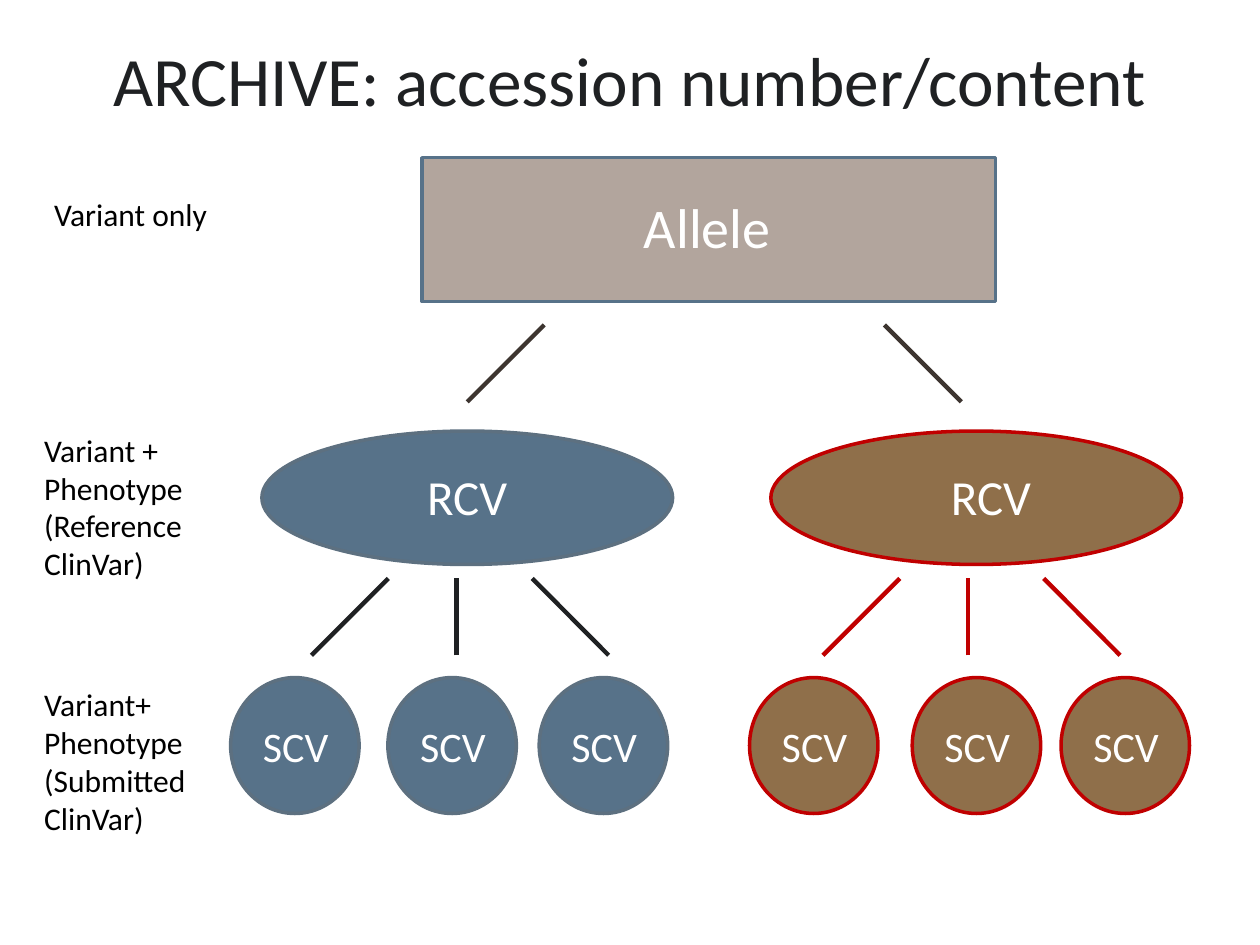
from dataclasses import dataclass

import lxml.etree
import pptx
import pptx.dml.color
import pptx.enum.shapes
import pptx.enum.text
import pptx.oxml.ns
import pptx.util

Cm = pptx.util.Cm
Pt = pptx.util.Pt
SHAPE = pptx.enum.shapes.MSO_SHAPE
FONT = "Calibri"
COLORS = {
    "ink": "1F2123",
    "black": "000000",
    "white": "FFFFFF",
    "blue": "577289",
    "blue_edge": "5D7080",
    "brown": "8F6F4A",
    "red": "C00000",
    "taupe": "B2A59D",
    "branch": "3D3530",
}


@dataclass
class Box:
    left: float
    top: float
    width: float
    height: float

    def lengths(self) -> list:
        return [Cm(v) for v in (self.left, self.top, self.width, self.height)]


@dataclass
class Family:
    fill: str
    edge: str
    spoke: str
    rcv_left: float
    rcv_label_left: float
    spoke_x: float
    scv_lefts: tuple


@dataclass
class Caption:
    box: Box
    lines: tuple
    wrap: bool


FAMILIES = (
    Family("blue", "blue_edge", "ink", 5.28, 8.36, 9.2, (4.65, 7.82, 10.87)),
    Family("brown", "red", "red", 15.54, 18.92, 19.51, (15.11, 18.39, 21.39)),
)
SPOKES = ((-1.37, -2.92), (0, 0), (1.53, 3.07))
BRANCHES = ((10.97, 9.42), (17.83, 19.38))
CAPTIONS = (
    Caption(Box(0.84, 3.81, 3.63, 1.02), ("Variant only",), False),
    Caption(Box(0.64, 8.56, 4.39, 3.33),
            ("Variant +", "Phenotype", "(Reference ClinVar)"), True),
    Caption(Box(0.64, 13.69, 3.4, 3.33),
            ("Variant+", "Phenotype", "(Submitted", "ClinVar)"), False),
)


def rgb(name: str) -> pptx.dml.color.RGBColor:
    return pptx.dml.color.RGBColor.from_string(COLORS[name])


def add_run(p, text: str, size: float, color: str) -> None:
    r = p.add_run()
    r.text = text
    r.font.name = FONT
    r.font.size = Pt(size)
    r.font.color.rgb = rgb(color)


def write_lines(tf, lines: tuple, size: float, color: str, wrap: bool = False) -> None:
    tf.word_wrap = wrap
    tf.vertical_anchor = pptx.enum.text.MSO_ANCHOR.TOP
    tf.auto_size = pptx.enum.text.MSO_AUTO_SIZE.SHAPE_TO_FIT_TEXT
    for i, line in enumerate(lines):
        p = tf.add_paragraph() if i else tf.paragraphs[0]
        p.alignment = pptx.enum.text.PP_ALIGN.LEFT
        add_run(p, line, size, color)


def add_shape(s, kind, box: Box, fill: str, edge: str = "", weight: float = 2):
    sp = s.shapes.add_shape(kind, *box.lengths())
    sp.shadow.inherit = False
    sp.fill.solid()
    sp.fill.fore_color.rgb = rgb(fill)
    if edge:
        sp.line.color.rgb = rgb(edge)
        sp.line.width = Pt(weight)
    else:
        sp.line.fill.background()
    return sp


def add_label(s, box: Box, text: str, size: float, fill: str, edge: str = "") -> None:
    sp = add_shape(s, SHAPE.RECTANGLE, box, fill, edge, 0.75)
    write_lines(sp.text_frame, (text,), size, "white")


def add_line(s, x1: float, y1: float, x2: float, y2: float, color: str) -> None:
    line = s.shapes.add_connector(
        pptx.enum.shapes.MSO_CONNECTOR.STRAIGHT, Cm(x1), Cm(y1), Cm(x2), Cm(y2))
    line.line.color.rgb = rgb(color)
    line.line.width = Pt(2.5)
    lxml.etree.SubElement(line._element.spPr, pptx.oxml.ns.qn("a:effectLst"))


def add_title(s, text: str) -> None:
    sp = s.shapes.title
    sp.left, sp.top, sp.width, sp.height = Box(1.27, 0, 22.86, 3.18).lengths()
    tf = sp.text_frame
    tf.auto_size = pptx.enum.text.MSO_AUTO_SIZE.NONE
    tf.vertical_anchor = pptx.enum.text.MSO_ANCHOR.MIDDLE
    p = tf.paragraphs[0]
    p.alignment = pptx.enum.text.PP_ALIGN.CENTER
    add_run(p, text, 39.6, "ink")


def add_caption(s, caption: Caption) -> None:
    tf = s.shapes.add_textbox(*caption.box.lengths()).text_frame
    write_lines(tf, caption.lines, 18, "black", caption.wrap)


def add_allele(s) -> None:
    add_shape(s, SHAPE.RECTANGLE, Box(8.51, 3.18, 11.56, 2.9), "taupe", "blue")
    add_label(s, Box(12.73, 3.76, 3.1, 1.63), "Allele", 32, "taupe", "taupe")
    for upper, lower in BRANCHES:
        add_line(s, lower, 8.1, upper, 6.55, "branch")


def add_family(s, f: Family) -> None:
    add_shape(s, SHAPE.OVAL, Box(f.rcv_left, 8.69, 8.28, 2.69), f.fill, f.edge)
    add_label(s, Box(f.rcv_label_left, 9.27, 2.13, 1.45), "RCV", 28, f.fill)
    for upper, lower in SPOKES:
        add_line(s, f.spoke_x + lower, 13.21, f.spoke_x + upper, 11.66, f.spoke)
    for left in f.scv_lefts:
        add_shape(s, SHAPE.OVAL, Box(left, 13.66, 2.59, 2.74), f.fill, f.edge)
        add_label(s, Box(left + 0.4, 14.4, 1.85, 1.27), "SCV", 24, f.fill)


def main() -> None:
    prs = pptx.Presentation()
    prs.slide_width, prs.slide_height = Cm(25.4), Cm(19.05)
    s = prs.slides.add_slide(prs.slide_layouts[5])
    add_title(s, "ARCHIVE: accession number/content")
    for caption in CAPTIONS:
        add_caption(s, caption)
    add_allele(s)
    for family in FAMILIES:
        add_family(s, family)
    prs.save("out.pptx")


if __name__ == "__main__":
    main()
